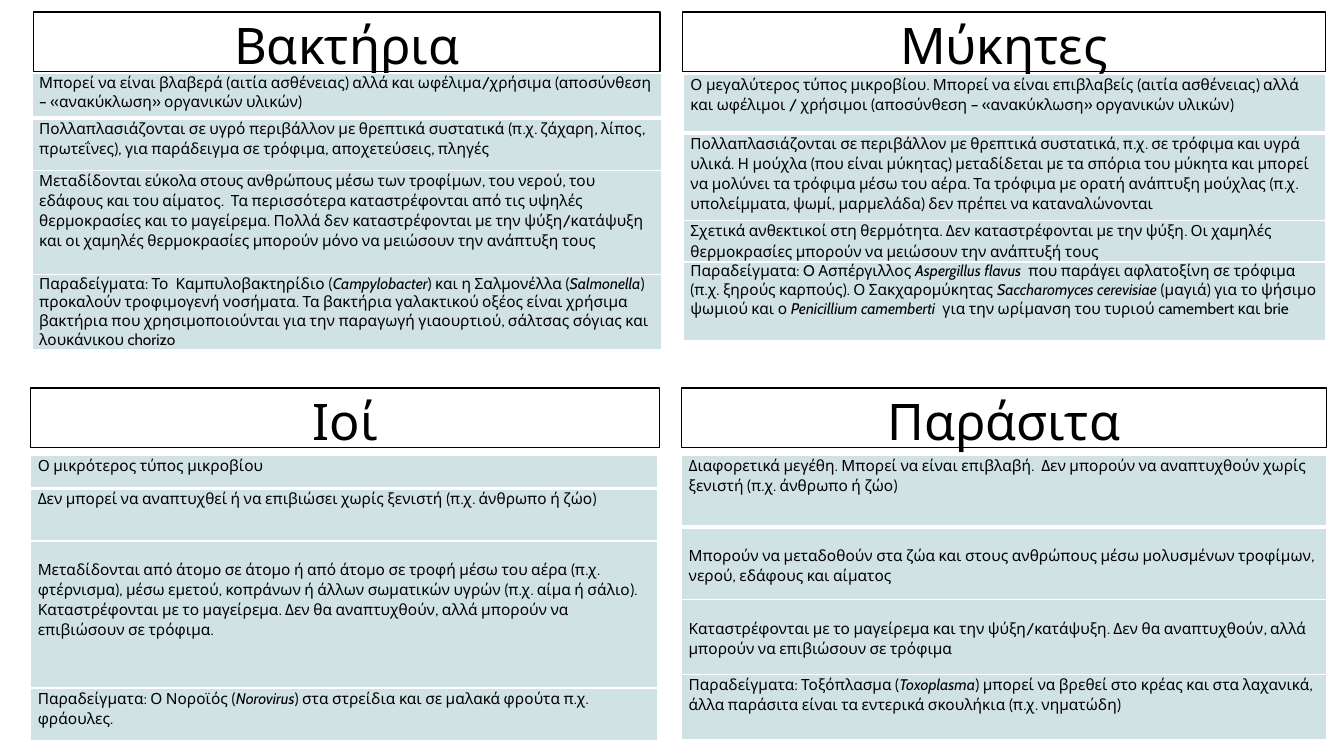
import pptx
import pptx.dml.color
import pptx.enum.shapes
import pptx.enum.text
import pptx.util
from lxml import etree

Pt = pptx.util.Pt
BLACK = pptx.dml.color.RGBColor(0x00, 0x00, 0x00)
WHITE = pptx.dml.color.RGBColor(0xFF, 0xFF, 0xFF)
PALE_TEAL = pptx.dml.color.RGBColor(0xD1, 0xE2, 0xE4)
FONT = "Cabin"
DRAWING = "{http://schemas.openxmlformats.org/drawingml/2006/main}"
TITLE_HEIGHT = 42.5
LINE_SPACING = 1.07

# Each row: height, top margin, line spacing, text with *italic* parts
MICROBES = [
    {
        "title": "Βακτήρια", "title_box": (23.8, 8.6, 447.8), "table_box": (23, 52.6, 449.3),
        "rows": [
            (31.7, 0, 1.0, "Μπορεί να είναι βλαβερά (αιτία ασθένειας) αλλά και ωφέλιμα/χρήσιμα "
             "(αποσύνθεση – «ανακύκλωση» οργανικών υλικών)"),
            (37.4, 0, LINE_SPACING, "Πολλαπλασιάζονται σε υγρό περιβάλλον με θρεπτικά συστατικά "
             "(π.χ. ζάχαρη, λίπος, πρωτεΐνες), για παράδειγμα σε τρόφιμα, αποχετεύσεις, πληγές"),
            (74.2, 0, LINE_SPACING, "Μεταδίδονται εύκολα στους ανθρώπους μέσω των τροφίμων, του νερού, "
             "του εδάφους και του αίματος.  Τα περισσότερα καταστρέφονται από τις υψηλές θερμοκρασίες "
             "και το μαγείρεμα. Πολλά δεν καταστρέφονται με την ψύξη/κατάψυξη και οι χαμηλές "
             "θερμοκρασίες μπορούν μόνο να μειώσουν την ανάπτυξη τους"),
            (53, 0, 1.0, "Παραδείγματα: Το  Καμπυλοβακτηρίδιο (*Campylobacter*) και η Σαλμονέλλα "
             "(*Salmonella*) προκαλούν τροφιμογενή νοσήματα. Τα βακτήρια γαλακτικού οξέος είναι "
             "χρήσιμα βακτήρια που χρησιμοποιούνται για την παραγωγή γιαουρτιού, σάλτσας σόγιας "
             "και λουκάνικου chorizo"),
        ],
    },
    {
        "title": "Μύκητες", "title_box": (487.4, 8.6, 459.4), "table_box": (488.2, 53.3, 458.6),
        "rows": [
            (41.8, 0, LINE_SPACING, "Ο μεγαλύτερος τύπος μικροβίου. Μπορεί να είναι επιβλαβείς (αιτία "
             "ασθένειας) αλλά και ωφέλιμοι / χρήσιμοι (αποσύνθεση – «ανακύκλωση» οργανικών υλικών)"),
            (62.6, 0, LINE_SPACING, "Πολλαπλασιάζονται σε περιβάλλον με θρεπτικά συστατικά, π.χ. σε "
             "τρόφιμα και υγρά υλικά. Η μούχλα (που είναι μύκητας) μεταδίδεται με τα σπόρια του "
             "μύκητα και μπορεί να μολύνει τα τρόφιμα μέσω του αέρα. Τα τρόφιμα με ορατή ανάπτυξη "
             "μούχλας (π.χ. υπολείμματα, ψωμί, μαρμελάδα) δεν πρέπει να καταναλώνονται"),
            (29.5, 0, LINE_SPACING, "Σχετικά ανθεκτικοί στη θερμότητα. Δεν καταστρέφονται με την ψύξη. "
             "Οι χαμηλές θερμοκρασίες μπορούν να μειώσουν την ανάπτυξή τους"),
            (56.2, 0, 1.0, "Παραδείγματα: O Ασπέργιλλος *Aspergillus flavus  *που παράγει αφλατοξίνη "
             "σε τρόφιμα (π.χ. ξηρούς καρπούς). Ο Σακχαρομύκητας *Saccharomyces cerevisiae *(μαγιά) "
             "για το ψήσιμο ψωμιού και ο *Penicillium camemberti*  για την ωρίμανση του τυριού "
             "camembert και brie"),
        ],
    },
    {
        "title": "Ιοί", "title_box": (21.8, 277.2, 449.3), "table_box": (22, 325.4, 447.8),
        "rows": [
            (23.6, 0, LINE_SPACING, "Ο μικρότερος τύπος μικροβίου"),
            (37.4, 0, LINE_SPACING, "Δεν μπορεί να αναπτυχθεί ή να επιβιώσει χωρίς ξενιστή "
             "(π.χ. άνθρωπο ή ζώο)"),
            (105.1, 13, LINE_SPACING, "Μεταδίδονται από άτομο σε άτομο ή από άτομο σε τροφή μέσω του "
             "αέρα (π.χ. φτέρνισμα), μέσω εμετού, κοπράνων ή άλλων σωματικών υγρών (π.χ. αίμα ή "
             "σάλιο). Καταστρέφονται με το μαγείρεμα. Δεν θα αναπτυχθούν, αλλά μπορούν να "
             "επιβιώσουν σε τρόφιμα."),
            (37.4, 0, LINE_SPACING, "Παραδείγματα: Ο Νοροϊός (*Norovirus*) στα στρείδια και σε μαλακά "
             "φρούτα π.χ. φράουλες."),
        ],
    },
    {
        "title": "Παράσιτα", "title_box": (486.7, 277.2, 460.8), "table_box": (486.9, 325.4, 460.8),
        "rows": [
            (51.1, 0, LINE_SPACING, "Διαφορετικά μεγέθη. Μπορεί να είναι επιβλαβή.  Δεν μπορούν να "
             "αναπτυχθούν χωρίς ξενιστή (π.χ. άνθρωπο ή ζώο)"),
            (51.8, 13, LINE_SPACING, "Μπορούν να μεταδοθούν στα ζώα και στους ανθρώπους μέσω μολυσμένων "
             "τροφίμων, νερού, εδάφους και αίματος"),
            (53.3, 13, LINE_SPACING, "Καταστρέφονται με το μαγείρεμα και την ψύξη/κατάψυξη. Δεν θα "
             "αναπτυχθούν, αλλά μπορούν να επιβιώσουν σε τρόφιμα"),
            (46.8, 0, LINE_SPACING, "Παραδείγματα: Τοξόπλασμα (*Toxoplasma*) μπορεί να βρεθεί στο κρέας "
             "και στα λαχανικά, άλλα παράσιτα είναι τα εντερικά σκουλήκια (π.χ. νηματώδη)"),
        ],
    },
]


def style_run(run, size, italic=False):
    run.font.name = FONT
    run.font.size = Pt(size)
    run.font.color.rgb = BLACK
    run.font.italic = italic


def add_cell_borders(cell, top, bottom):
    """Draw white borders, one point wide at the sides."""
    properties = cell._tc.get_or_add_tcPr()
    for side, width in (("L", 1), ("R", 1), ("T", top), ("B", bottom)):
        line = etree.SubElement(properties, f"{DRAWING}ln{side}", w=str(Pt(width)))
        fill = etree.SubElement(line, f"{DRAWING}solidFill")
        etree.SubElement(fill, f"{DRAWING}srgbClr", val=str(WHITE))


presentation = pptx.Presentation()
presentation.slide_width = Pt(960)
presentation.slide_height = Pt(540)
slide = presentation.slides.add_slide(presentation.slide_layouts[6])

for microbe in MICROBES:
    left, top, width = microbe["title_box"]
    title = slide.shapes.add_shape(pptx.enum.shapes.MSO_SHAPE.RECTANGLE,
                                   Pt(left), Pt(top), Pt(width), Pt(TITLE_HEIGHT))
    title.shadow.inherit = False
    title.fill.solid()
    title.fill.fore_color.rgb = WHITE
    title.line.color.rgb = BLACK
    title.line.width = Pt(1)
    title.text_frame.text = microbe["title"]
    title.text_frame.vertical_anchor = pptx.enum.text.MSO_ANCHOR.MIDDLE
    paragraph = title.text_frame.paragraphs[0]
    paragraph.alignment = pptx.enum.text.PP_ALIGN.CENTER
    paragraph.line_spacing = LINE_SPACING
    paragraph.space_after = Pt(8)
    style_run(paragraph.runs[0], 36)

for microbe in MICROBES:
    rows = microbe["rows"]
    left, top, width = microbe["table_box"]
    height = sum(row[0] for row in rows)
    table = slide.shapes.add_table(len(rows), 1, Pt(left), Pt(top), Pt(width), Pt(height)).table
    table.first_row = False
    table.horz_banding = False
    for index, (row_height, margin_top, line_spacing, text) in enumerate(rows):
        table.rows[index].height = Pt(row_height)
        cell = table.cell(index, 0)
        cell.margin_left = cell.margin_right = Pt(5)
        cell.margin_top = Pt(margin_top)
        cell.margin_bottom = Pt(0)
        add_cell_borders(cell, top=3 if index == 1 else 1, bottom=3 if index == 0 else 1)
        cell.fill.solid()
        cell.fill.fore_color.rgb = PALE_TEAL
        paragraph = cell.text_frame.paragraphs[0]
        paragraph.line_spacing = line_spacing
        for part, words in enumerate(text.split("*")):
            run = paragraph.add_run()
            run.text = words
            style_run(run, 11, italic=part % 2 == 1)

presentation.save("out.pptx")
